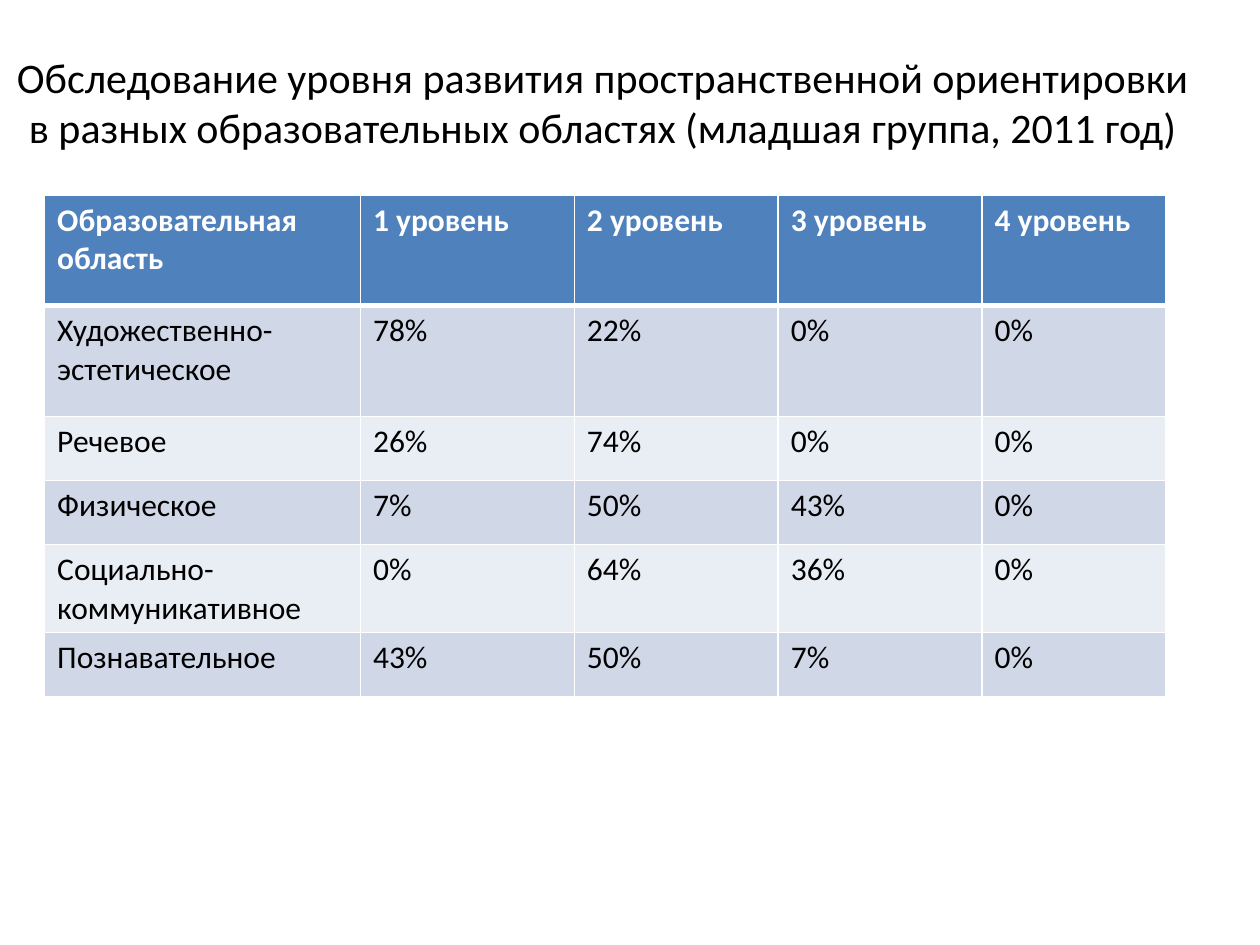
from lxml.etree import SubElement
from pptx import Presentation
from pptx.dml.color import RGBColor
from pptx.enum.text import MSO_ANCHOR, PP_ALIGN
from pptx.oxml.ns import qn
from pptx.util import Pt

BLACK = RGBColor(0, 0, 0)
WHITE = RGBColor(255, 255, 255)
HEADER = RGBColor(0x4F, 0x81, 0xBD)
BANDS = RGBColor(0xD0, 0xD8, 0xE8), RGBColor(0xE9, 0xED, 0xF4)

TITLE = ("Обследование уровня развития пространственной ориентировки "
         "в разных образовательных областях (младшая группа, 2011 год)")
ROWS = [
    ("Образовательная область", *(f"{n} уровень" for n in range(1, 5))),
    ("Художественно-эстетическое", "78%", "22%", "0%", "0%"),
    ("Речевое", "26%", "74%", "0%", "0%"),
    ("Физическое", "7%", "50%", "43%", "0%"),
    ("Социально-коммуникативное", "0%", "64%", "36%", "0%"),
    ("Познавательное", "43%", "50%", "7%", "0%"),
]
COL_WIDTHS = [180.5, 122.25, 116.5, 116.5, 105]
ROW_HEIGHTS = [63.2] * 2 + [36.6] * 4


def write(tf, text, size=18, color=BLACK, bold=False, align=PP_ALIGN.LEFT, font="Calibri"):
    p = tf.paragraphs[0]
    p.alignment = align
    r = p.add_run()
    r.text = text
    r.font.name, r.font.size, r.font.bold = font, Pt(size), bold
    r.font.color.rgb = color


def set_borders(cell, bottom=1, top=1):
    """Draw white cell borders; the lines must precede the fill in tcPr."""
    tc_pr = cell._tc.get_or_add_tcPr()
    for side, width in (("L", 1), ("R", 1), ("T", top), ("B", bottom)):
        ln = SubElement(tc_pr, qn(f"a:ln{side}"), w=str(Pt(width)))
        fill = SubElement(ln, qn("a:solidFill"))
        SubElement(fill, qn("a:srgbClr"), val=str(WHITE))


class SlideBuilder:
    def __init__(self, prs):
        self.s = prs.slides.add_slide(prs.slide_layouts[6])

    def title(self, text, left, top, width, height):
        tf = self.s.shapes.add_textbox(Pt(left), Pt(top), Pt(width), Pt(height)).text_frame
        tf.word_wrap = True
        tf.vertical_anchor = MSO_ANCHOR.MIDDLE
        write(tf, text, size=24, align=PP_ALIGN.CENTER)

    def table(self, rows, left, top, widths, heights):
        table = self.s.shapes.add_table(
            len(rows), len(widths), Pt(left), Pt(top), Pt(sum(widths)), Pt(sum(heights))).table
        for col, width in zip(table.columns, widths):
            col.width = Pt(width)
        for row, height in zip(table.rows, heights):
            row.height = Pt(height)
        for i, texts in enumerate(rows):
            head = i == 0
            for cell, text in zip(table.rows[i].cells, texts):
                set_borders(cell, bottom=3 if head else 1, top=3 if i == 1 else 1)
                cell.fill.solid()
                cell.fill.fore_color.rgb = HEADER if head else BANDS[(i - 1) % 2]
                write(cell.text_frame, text, color=WHITE if head else BLACK, bold=head)


def main():
    prs = Presentation()
    prs.slide_width, prs.slide_height = Pt(720), Pt(540)
    slide = SlideBuilder(prs)
    slide.title(TITLE, 0, 0, 689, 116)
    slide.table(ROWS, 25.5, 111.5, COL_WIDTHS, ROW_HEIGHTS)
    prs.save("out.pptx")


if __name__ == "__main__":
    main()
